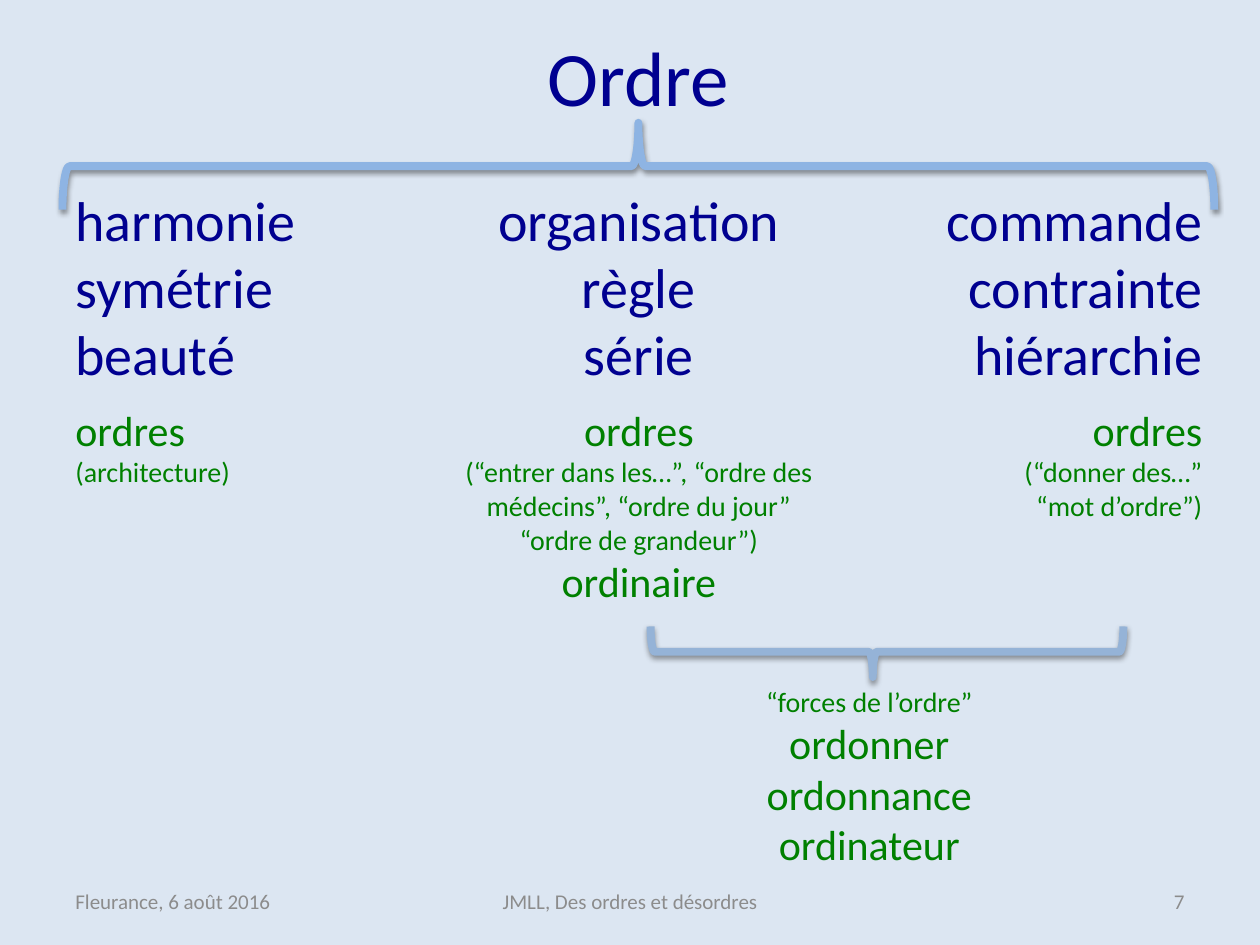
from dataclasses import dataclass

import pptx
import pptx.dml.color
import pptx.enum.shapes
import pptx.enum.text
import pptx.oxml
import pptx.oxml.ns
import pptx.util

Cm = pptx.util.Cm
Pt = pptx.util.Pt
ALIGN = pptx.enum.text.PP_ALIGN
ANCHOR = pptx.enum.text.MSO_ANCHOR

FONT = "Calibri"
NAVY, GREEN, GREY = "000090", "008000", "8C8C8C"
BACKGROUND = "DCE6F2"

MARGIN = 1.27
COLUMN_PITCH, COLUMN_WIDTH = 7.57, 8.08
MEANINGS_TOP, EXAMPLES_TOP = 3.61, 8.03
FOOTER_TOP, FOOTER_HEIGHT = 17.65, 1.02


@dataclass
class Line:
    text: str
    size: float


@dataclass
class Column:
    align: ALIGN
    meanings: list[Line]
    examples: list[Line]


@dataclass
class Brace:
    """A horizontal brace: its centre, span and depth as seen, in cm."""
    center_x: float
    center_y: float
    span: float
    depth: float
    rotation: int
    tip: float
    color: str


@dataclass
class FooterPart:
    text: str
    left: float
    width: float
    align: ALIGN


def words(size: float, *texts: str) -> list[Line]:
    return [Line(text, size) for text in texts]


COLUMNS = [
    Column(ALIGN.LEFT,
           words(32, "harmonie", "symétrie", "beauté"),
           words(24, "ordres") + words(16, "(architecture)")),
    Column(ALIGN.CENTER,
           words(32, "organisation", "règle", "série"),
           words(24, "ordres")
           + words(16, "(“entrer dans les…”, “ordre des médecins”, “ordre du jour”",
                   "“ordre de grandeur”)")
           + words(24, "ordinaire")),
    Column(ALIGN.RIGHT,
           words(32, "commande", "contrainte", "hiérarchie"),
           words(24, "ordres") + words(16, "(“donner des…”", "“mot d’ordre”)")),
]

SHARED_EXAMPLES = (words(16, "“forces de l’ordre”")
                   + words(24, "ordonner", "ordonnance", "ordinateur"))

BRACES = [
    Brace(12.87, 3.35, 23.22, 1.75, 270, 0.5, "8EB4E3"),
    Brace(17.88, 13.14, 9.53, 1.02, 90, 0.53, "95B3D7"),
]

FOOTER = [
    FooterPart("Fleurance, 6 août 2016", MARGIN, 5.92, ALIGN.LEFT),
    FooterPart("JMLL, Des ordres et désordres", 8.68, 8.05, ALIGN.CENTER),
    FooterPart("7", 18.21, 5.92, ALIGN.RIGHT),
]


def rgb(color: str) -> pptx.dml.color.RGBColor:
    return pptx.dml.color.RGBColor.from_string(color)


def write(frame, lines: list[Line], *, color: str, align: ALIGN,
          anchor: ANCHOR = ANCHOR.TOP) -> None:
    frame.word_wrap = True
    frame.auto_size = pptx.enum.text.MSO_AUTO_SIZE.NONE
    frame.vertical_anchor = anchor
    for index, line in enumerate(lines):
        paragraph = frame.add_paragraph() if index else frame.paragraphs[0]
        paragraph.alignment = align
        run = paragraph.add_run()
        run.text = line.text
        run.font.name = FONT
        run.font.size = Pt(line.size)
        run.font.color.rgb = rgb(color)


def add_text(slide, lines: list[Line], left: float, top: float,
             width: float, height: float, **text_format) -> None:
    box = slide.shapes.add_textbox(Cm(left), Cm(top), Cm(width), Cm(height))
    write(box.text_frame, lines, **text_format)


def add_shadow(shape) -> None:
    shape.shadow.inherit = False
    effects = shape._element.spPr.find(pptx.oxml.ns.qn("a:effectLst"))
    effects.append(pptx.oxml.parse_xml(
        f'<a:outerShdw {pptx.oxml.ns.nsdecls("a")} blurRad="{Pt(3.1)}" '
        f'dist="{Pt(1.6)}" dir="5400000" rotWithShape="0">'
        '<a:srgbClr val="000000"><a:alpha val="38000"/></a:srgbClr>'
        '</a:outerShdw>'))


def add_brace(slide, brace: Brace) -> None:
    shape = slide.shapes.add_shape(
        pptx.enum.shapes.MSO_SHAPE.RIGHT_BRACE,
        Cm(brace.center_x - brace.depth / 2), Cm(brace.center_y - brace.span / 2),
        Cm(brace.depth), Cm(brace.span))
    shape.rotation = brace.rotation
    shape.adjustments[0] = 0.08
    shape.adjustments[1] = brace.tip
    shape.fill.background()
    shape.line.color.rgb = rgb(brace.color)
    shape.line.width = Pt(4.5)
    add_shadow(shape)


def main() -> None:
    deck = pptx.Presentation()
    deck.slide_width, deck.slide_height = Cm(25.4), Cm(19.05)
    slide = deck.slides.add_slide(deck.slide_layouts.get_by_name("Title Only"))
    slide.background.fill.solid()
    slide.background.fill.fore_color.rgb = rgb(BACKGROUND)

    title = slide.shapes.title
    title.left, title.top = Cm(1.44), Cm(0.46)
    title.width, title.height = Cm(22.86), Cm(2.13)
    write(title.text_frame, words(44, "Ordre"), color=NAVY, align=ALIGN.CENTER)

    for index, column in enumerate(COLUMNS):
        left = MARGIN + index * COLUMN_PITCH
        add_text(slide, column.meanings, left, MEANINGS_TOP, COLUMN_WIDTH, 4.4,
                 color=NAVY, align=column.align)
        add_text(slide, column.examples, left, EXAMPLES_TOP, COLUMN_WIDTH, 4.6,
                 color=GREEN, align=column.align)

    for brace in BRACES:
        add_brace(slide, brace)
    add_text(slide, SHARED_EXAMPLES, 14.68, 13.67, 5.69, 4.01,
             color=GREEN, align=ALIGN.CENTER)

    for part in FOOTER:
        add_text(slide, words(12, part.text), part.left, FOOTER_TOP,
                 part.width, FOOTER_HEIGHT, color=GREY, align=part.align,
                 anchor=ANCHOR.MIDDLE)

    deck.save("out.pptx")


if __name__ == "__main__":
    main()
